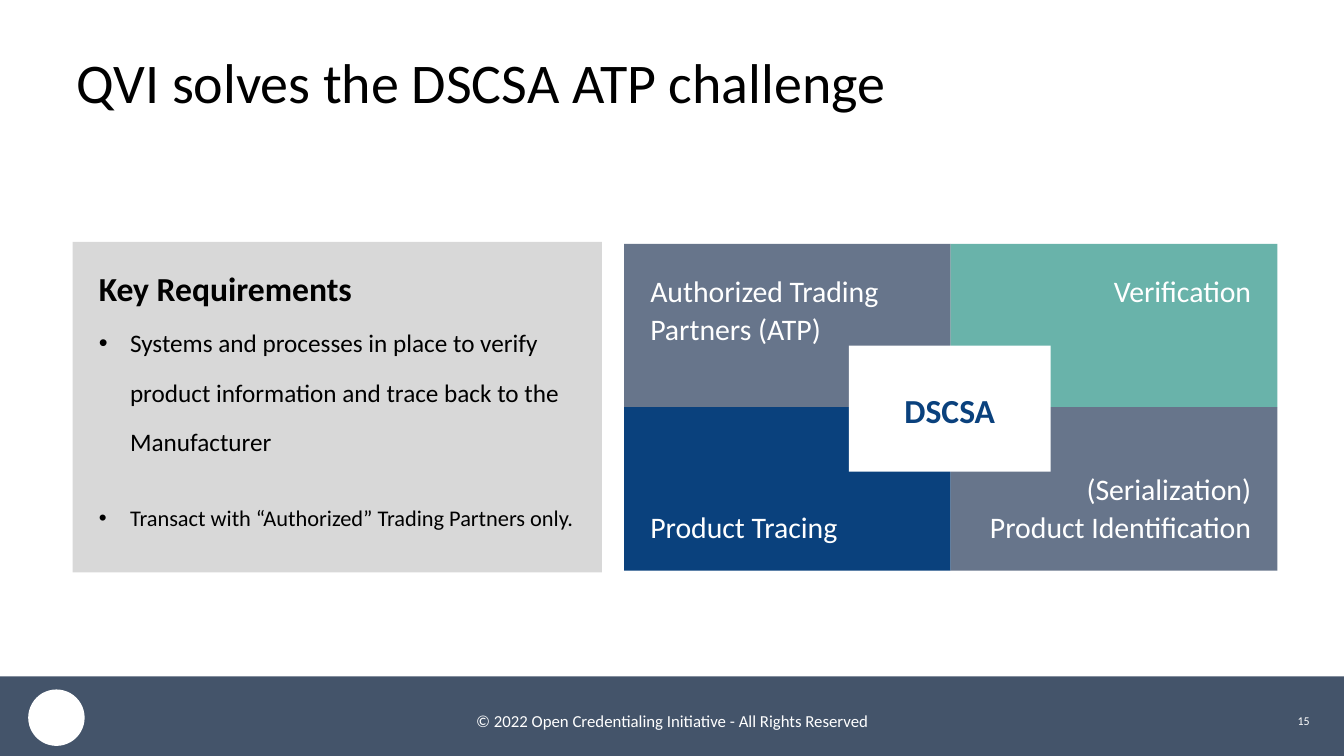
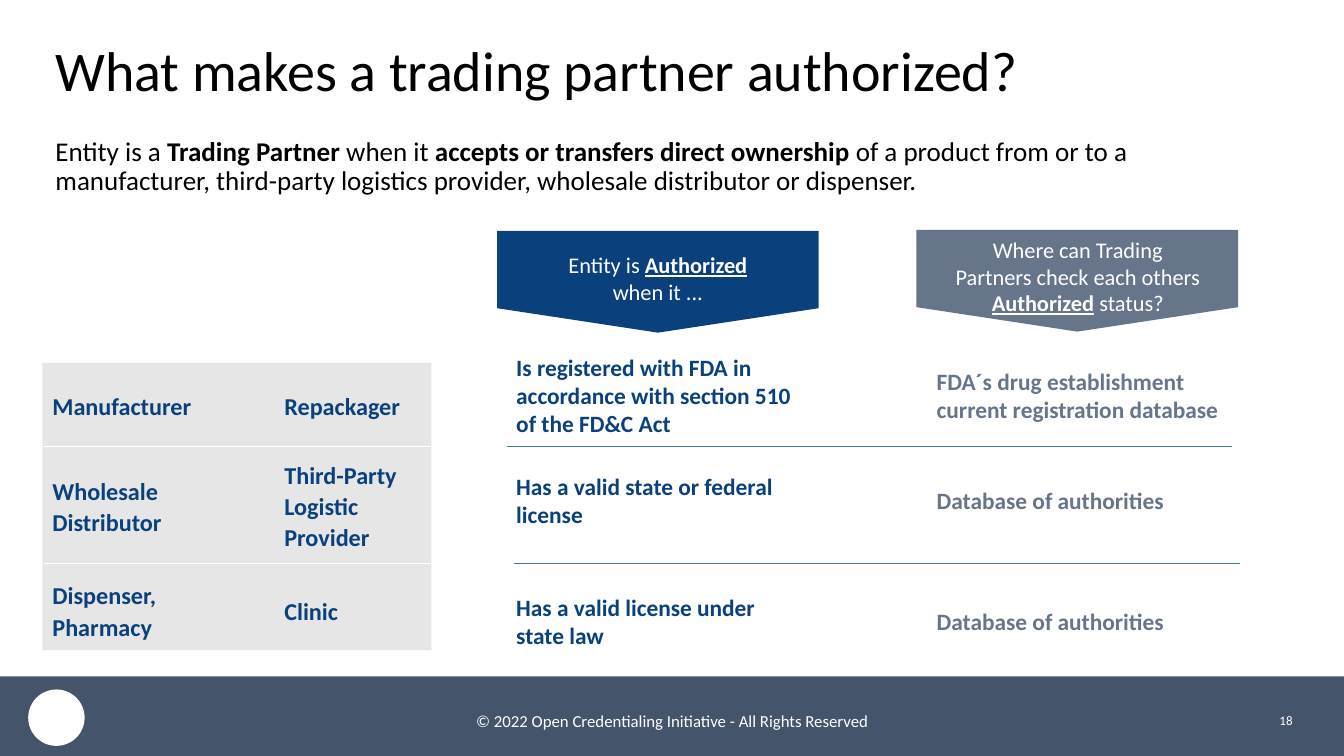
from dataclasses import dataclass
from typing import NamedTuple, Sequence

from lxml.etree import SubElement
from pptx import Presentation
from pptx.dml.color import RGBColor
from pptx.enum.shapes import MSO_CONNECTOR as Connector, MSO_SHAPE as Preset
from pptx.enum.text import MSO_ANCHOR as Anchor, PP_ALIGN as Align
from pptx.oxml.ns import qn
from pptx.util import Inches, Pt


@dataclass(frozen=True)
class Theme:
    font: str = "Calibri"
    black: str = "000000"
    white: str = "FFFFFF"
    navy: str = "0A417D"
    slate: str = "67758B"
    teal: str = "69B3AA"
    band: str = "44546A"
    panel: str = "D8D8D8"
    roles: str = "E7E6E6"
    rule: str = "4472C4"
    title: float = 40
    heading: float = 24
    quadrant: float = 21.3
    intro: float = 19.3
    bullet: float = 18
    small_bullet: float = 16
    role: float = 17.3
    detail: float = 16.7
    banner: float = 16
    footer: float = 12


THEME = Theme()


class Box(NamedTuple):
    left: float
    top: float
    width: float
    height: float

    def inches(self) -> list:
        return [Inches(length) for length in self]


class Run(NamedTuple):
    text: str
    bold: bool = False
    underline: bool = False


@dataclass(frozen=True)
class Para:
    runs: Sequence[Run]
    size: float | None = None
    bullet: bool = False
    before: float = 0


class Quadrant(NamedTuple):
    column: int
    row: int
    lines: Sequence[str]
    fill: str


class Column(NamedTuple):
    left: float
    width: float
    centers: Sequence[float]
    size: float
    color: str
    spacing: float
    entries: Sequence[Sequence[str]]


class Banner(NamedTuple):
    plate: Box
    label: Box
    fill: str
    paras: Sequence[Para]


# Drawing helpers
def write(shape, paras: Sequence[str | Para], *, size: float, color: str = THEME.black,
          bold: bool = False, align=Align.LEFT, anchor=Anchor.TOP,
          spacing: float = 1.0, inset: tuple[float, float] = (0, 0)) -> None:
    frame = shape.text_frame
    frame.word_wrap = True
    frame.vertical_anchor = anchor
    frame.margin_left = frame.margin_right = Inches(inset[0])
    frame.margin_top = frame.margin_bottom = Inches(inset[1])
    for index, entry in enumerate(paras):
        para = entry if isinstance(entry, Para) else Para([Run(entry, bold)])
        line = frame.paragraphs[0] if index == 0 else frame.add_paragraph()
        if para.bullet:
            add_bullet(line, color)
        line.alignment = align
        line.line_spacing = spacing
        if para.before:
            line.space_before = Pt(para.before)
        for part in para.runs:
            run = line.add_run()
            run.text = part.text
            font = run.font
            font.name, font.size = THEME.font, Pt(para.size or size)
            font.bold, font.underline = part.bold, part.underline
            font.color.rgb = RGBColor.from_string(color)


def add_bullet(line, color: str) -> None:
    props = line._p.get_or_add_pPr()
    props.set("marL", str(Inches(0.31)))
    props.set("indent", str(Inches(-0.31)))
    SubElement(SubElement(props, qn("a:buClr")), qn("a:srgbClr")).set("val", color)
    SubElement(props, qn("a:buFont")).set("typeface", "Arial")
    SubElement(props, qn("a:buChar")).set("char", "•")


def add_label(slide, box: Box, paras: Sequence[str | Para], **style) -> None:
    write(slide.shapes.add_textbox(*box.inches()), paras, **style)


def add_block(slide, box: Box, fill: str, preset=Preset.RECTANGLE):
    block = slide.shapes.add_shape(preset, *box.inches())
    block.shadow.inherit = False
    block.fill.solid()
    block.fill.fore_color.rgb = RGBColor.from_string(fill)
    block.line.fill.background()
    return block


def add_rule(slide, left: float, right: float, y: float, color: str) -> None:
    rule = slide.shapes.add_connector(
        Connector.STRAIGHT, Inches(left), Inches(y), Inches(right), Inches(y))
    rule.line.color.rgb = RGBColor.from_string(color)
    rule.line.width = Pt(0.75)
    SubElement(rule._element.spPr, qn("a:effectLst"))


def start_slide(deck, title: str, title_box: Box, number: str,
                number_right: float, number_size: float):
    """Add a blank slide with the shared band, footer, number and title."""
    slide = deck.slides.add_slide(deck.slide_layouts[6])
    add_block(slide, Box(0, 6.71, 13.33, 0.79), THEME.band)
    add_block(slide, Box(0.28, 6.84, 0.56, 0.56), THEME.white, Preset.OVAL)
    add_label(slide, Box(4.42, 6.95, 4.5, 0.4),
              ["© 2022 Open Credentialing Initiative - All Rights Reserved"],
              size=THEME.footer, color=THEME.white, align=Align.CENTER,
              anchor=Anchor.MIDDLE, inset=(0.1, 0.05))
    add_label(slide, Box(number_right - 3, 6.95, 3, 0.4), [number], size=number_size,
              color=THEME.white, align=Align.RIGHT, anchor=Anchor.MIDDLE,
              inset=(0.13, 0.13))
    add_label(slide, title_box, [title], size=THEME.title, anchor=Anchor.MIDDLE,
              spacing=0.9, inset=(0.13, 0.07))
    return slide


# Slide: DSCSA challenge
def build_challenge(deck) -> None:
    slide = start_slide(deck, "QVI solves the DSCSA ATP challenge",
                        Box(0.63, 0.36, 8.96, 0.98), "15", 13.12, 8.5)
    requirements = [
        Para([Run("Key Requirements", bold=True)], THEME.heading),
        Para([Run("Systems and processes in place to verify product information "
                  "and trace back to the Manufacturer")], bullet=True),
        Para([Run("Transact with “Authorized” Trading Partners only.")],
             THEME.small_bullet, bullet=True, before=22),
    ]
    write(add_block(slide, Box(0.72, 2.4, 5.25, 3.28), THEME.panel), requirements,
          size=THEME.bullet, spacing=1.63, inset=(0.26, 0.01))

    # Quadrants: text hugs the outer corners
    width, height = 3.24, 1.62
    quadrants = [
        Quadrant(0, 0, ["Authorized Trading Partners (ATP)"], THEME.slate),
        Quadrant(0, 1, ["Product Tracing"], THEME.navy),
        Quadrant(1, 0, ["Verification"], THEME.teal),
        Quadrant(1, 1, ["(Serialization)", "Product Identification"], THEME.slate),
    ]
    for column, row, lines, fill in quadrants:
        box = Box(6.19 + column * width, 2.42 + row * height, width, height)
        write(add_block(slide, box, fill), lines, size=THEME.quadrant,
              color=THEME.white, align=(Align.LEFT, Align.RIGHT)[column],
              anchor=(Anchor.TOP, Anchor.BOTTOM)[row], spacing=1.07,
              inset=(0.26, 0.26))
    write(add_block(slide, Box(8.42, 3.43, 2, 1.25), THEME.white), ["DSCSA"],
          size=THEME.heading, color=THEME.navy, bold=True, align=Align.CENTER,
          anchor=Anchor.MIDDLE, spacing=1.07, inset=(0.26, 0.26))


# Slide: authorized trading partners
def build_partners(deck) -> None:
    slide = start_slide(deck, "What makes a trading partner authorized?",
                        Box(0.42, 0.19, 12, 1.08), "18", 12.95, 9.3)
    intro = Para([
        Run("Entity is a "), Run("Trading Partner", bold=True), Run(" when it "),
        Run("accepts or transfers direct ownership", bold=True),
        Run(" of a product from or to a manufacturer, third-party logistics provider, "
            "wholesale distributor or dispenser."),
    ])
    add_label(slide, Box(0.42, 1.24, 12.29, 0.85), [intro], size=THEME.intro,
              spacing=0.9, inset=(0.13, 0.13))

    # Column banners
    authorized = Run("Authorized", bold=True, underline=True)
    banners = [
        Banner(Box(6.02, 1.2, 1.01, 3.19), Box(4.93, 2.42, 3.19, 0.49), THEME.navy,
               [Para([Run("Entity is "), authorized]), Para([Run("when it ...")])]),
        Banner(Box(10.18, 1.19, 1.01, 3.19), Box(9.29, 2.27, 2.8, 0.96), THEME.slate,
               [Para([Run("Where can Trading")]),
                Para([Run("Partners check each others "), authorized,
                      Run(" status?")])]),
    ]
    for banner in banners:
        plate = add_block(slide, banner.plate, banner.fill, Preset.PENTAGON)
        plate.adjustments[0] = 0.24
        plate.rotation = 90
        add_label(slide, banner.label, banner.paras, size=THEME.banner,
                  color=THEME.white, align=Align.CENTER, inset=(0.13, 0.07))

    # Role panel and row dividers
    add_block(slide, Box(0.42, 3.6, 3.86, 2.85), THEME.roles)
    for y, left, right in [(4.43, 5.03, 12.22), (5.59, 5.1, 12.3)]:
        add_rule(slide, 0.44, 4.27, y, THEME.white)
        add_rule(slide, left, right, y, THEME.rule)

    # Entries, centred on their row
    role_rows, detail_rows = (4.02, 5.01, 6.05), (3.92, 4.96, 6.16)
    columns = [
        Column(0.52, 1.67, role_rows, THEME.role, THEME.navy, 1.07,
               [["Manufacturer"], ["Wholesale", "Distributor"],
                ["Dispenser,", "Pharmacy"]]),
        Column(2.82, 1.45, role_rows, THEME.role, THEME.navy, 1.07,
               [["Repackager"], ["Third-Party", "Logistic", "Provider"], ["Clinic"]]),
        Column(5.12, 2.88, detail_rows, THEME.detail, THEME.navy, 1.0,
               [["Is registered with FDA in accordance with section 510 "
                 "of the FD&C Act"],
                ["Has a valid state or federal license"],
                ["Has a valid license under state law"]]),
        Column(9.29, 2.88, detail_rows, THEME.detail, THEME.slate, 1.0,
               [["FDA´s drug establishment current registration database"],
                ["Database of authorities"], ["Database of authorities"]]),
    ]
    height = 0.96
    for column in columns:
        for center, lines in zip(column.centers, column.entries):
            add_label(slide, Box(column.left, center - height / 2, column.width, height),
                      lines, size=column.size, color=column.color, bold=True,
                      anchor=Anchor.MIDDLE, spacing=column.spacing)


def main() -> None:
    deck = Presentation()
    deck.slide_width, deck.slide_height = Inches(13.33), Inches(7.5)
    build_challenge(deck)
    build_partners(deck)
    deck.save("out.pptx")


if __name__ == "__main__":
    main()
